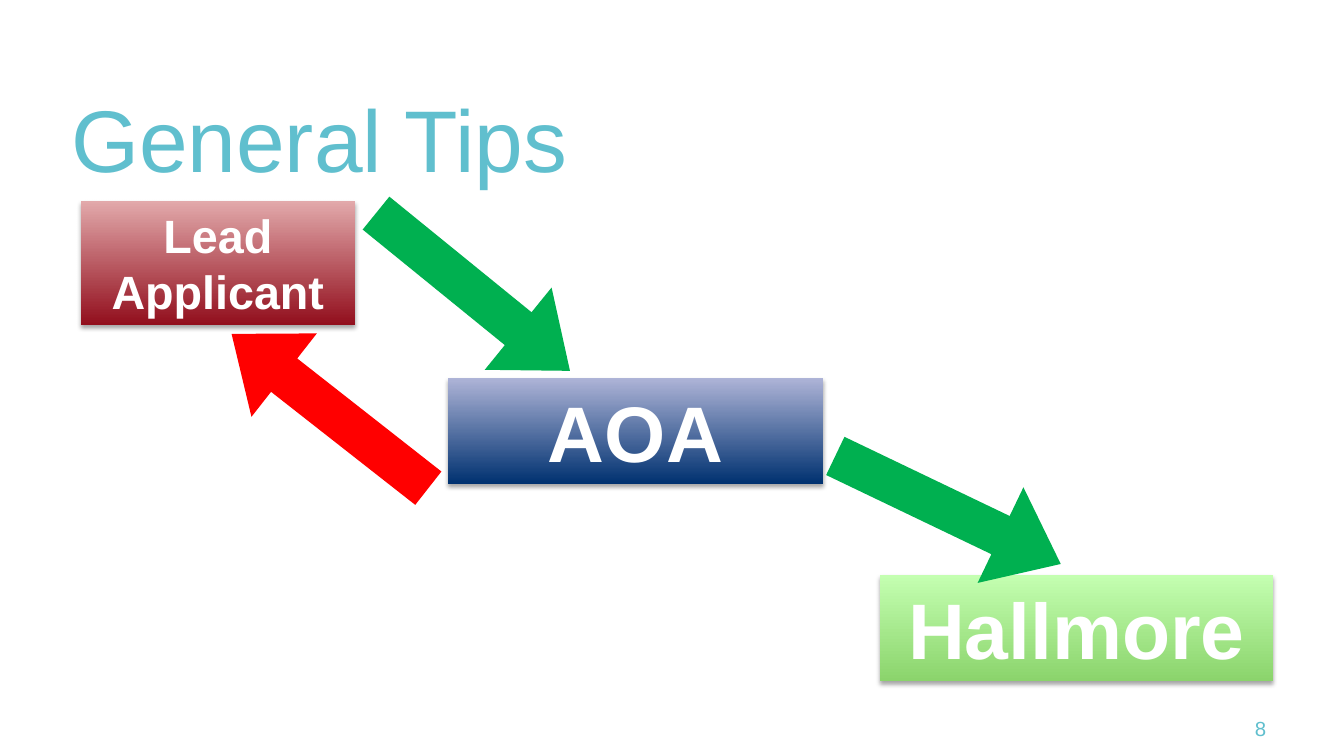
"""Build the General Tips slide: three linked parties and their arrows."""
from lxml import etree
from pptx import Presentation
from pptx.dml.color import RGBColor
from pptx.enum.shapes import MSO_SHAPE
from pptx.enum.text import MSO_ANCHOR, PP_ALIGN
from pptx.oxml.ns import qn
from pptx.util import Pt

RECT, ARROW = MSO_SHAPE.RECTANGLE, MSO_SHAPE.RIGHT_ARROW
LEFT, CENTER = PP_ALIGN.LEFT, PP_ALIGN.CENTER
MIDDLE = MSO_ANCHOR.MIDDLE

TITLE = ("General Tips", (71, 75, 1200, 126))
NUMBER = ("8", (1232, 708, 57, 40))
PARTIES = [
    ("AOA", (448, 378, 375, 106), "blue", "party"),
    ("Lead Applicant", (81, 201, 274, 124), "maroon", "applicant"),
    ("Hallmore", (880, 575, 393, 106), "lime", "party"),
]
ARROW_SIZE = (250, 106)
ARROWS = [
    ((348, 239), 39.1, "forward"),
    ((823, 457), 25.6, "forward"),
    ((205, 358), 218.1, "back"),
]
THEME = {
    "font": "Arial",
    "sizes": {"title": 60, "number": 14, "party": 54, "applicant": 32},
    "accent": "60BFCE",
    "light": "FFFFFF",
    "shadow": "000000",
    "gradients": {
        "blue": ("003170", "AEB4D7"),
        "maroon": ("920F1D", "E2A9AB"),
        "lime": ("8BD46C", "C4FFB1"),
    },
    "arrows": {"forward": "00B050", "back": "FF0000"},
}
EMU_PER_PX = 914400 / 105


def px(*lengths):
    return [round(n * EMU_PER_PX) for n in lengths]


def write(sp, text, size, color, align, bold=False):
    tf = sp.text_frame
    tf.word_wrap = True
    tf.vertical_anchor = MIDDLE
    p = tf.paragraphs[0]
    p.alignment = align
    r = p.add_run()
    r.text = text
    r.font.name = THEME["font"]
    r.font.size = Pt(THEME["sizes"][size])
    r.font.bold = bold
    r.font.color.rgb = RGBColor.from_string(color)
    return tf


def add_shape(slide, kind, box):
    sp = slide.shapes.add_shape(kind, *px(*box))
    sp.line.fill.background()
    sp.shadow.inherit = False
    return sp


def add_shadow(sp):
    effects = sp._element.spPr.find(qn("a:effectLst"))
    shadow = etree.SubElement(
        effects, qn("a:outerShdw"), blurRad=str(Pt(3.1)), dist=str(Pt(1.8)),
        dir="5400000", rotWithShape="0")
    color = etree.SubElement(shadow, qn("a:srgbClr"), val=THEME["shadow"])
    etree.SubElement(color, qn("a:alpha"), val="35000")


def add_party(slide, text, box, gradient, size):
    sp = add_shape(slide, RECT, box)
    sp.fill.gradient()
    sp.fill.gradient_angle = 90
    for stop, color in zip(sp.fill.gradient_stops, THEME["gradients"][gradient]):
        stop.color.rgb = RGBColor.from_string(color)
    add_shadow(sp)
    write(sp, text, size, THEME["light"], CENTER, bold=True)


def add_arrow(slide, corner, angle, direction):
    sp = add_shape(slide, ARROW, corner + ARROW_SIZE)
    sp.adjustments[0], sp.adjustments[1] = 0.4, 0.63
    sp.rotation = angle
    sp.fill.solid()
    sp.fill.fore_color.rgb = RGBColor.from_string(THEME["arrows"][direction])


def main():
    prs = Presentation()
    prs.slide_width, prs.slide_height = px(1344, 756)
    slide = prs.slides.add_slide(prs.slide_layouts[6])

    text, box = TITLE
    tf = write(slide.shapes.add_textbox(*px(*box)), text, "title", THEME["accent"], LEFT)
    tf.margin_left = tf.margin_right = tf.margin_top = tf.margin_bottom = 0
    text, box = NUMBER
    write(slide.shapes.add_textbox(*px(*box)), text, "number", THEME["accent"], CENTER)

    for party in PARTIES:
        add_party(slide, *party)
    for arrow in ARROWS:
        add_arrow(slide, *arrow)
    prs.save("out.pptx")


if __name__ == "__main__":
    main()
